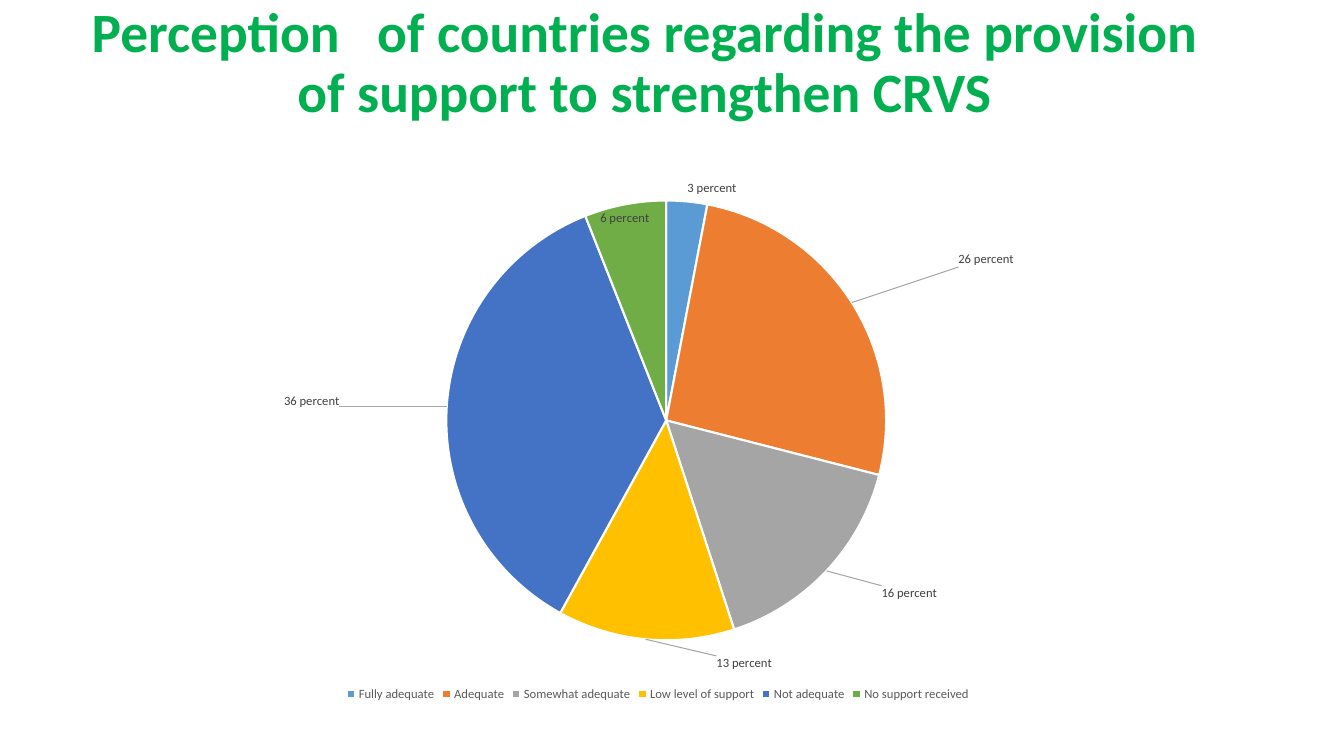
from dataclasses import dataclass

from lxml.etree import SubElement
from pptx import Presentation
from pptx.chart.data import CategoryChartData
from pptx.dml.color import RGBColor
from pptx.enum.chart import XL_CHART_TYPE, XL_LABEL_POSITION, XL_LEGEND_POSITION
from pptx.enum.text import MSO_ANCHOR, MSO_AUTO_SIZE, PP_ALIGN
from pptx.oxml import parse_xml
from pptx.oxml.ns import nsdecls, qn
from pptx.util import Pt


@dataclass(frozen=True)
class Theme:
    font: str = "Calibri"
    title: str = "00B050"
    label: str = "404040"
    legend: str = "595959"
    leader: str = "A6A6A6"
    border: str = "FFFFFF"
    title_size: float = 39.6
    chart_size: float = 9


THEME = Theme()

TITLE = "Perception   of countries regarding the provision of support to strengthen CRVS"

ANSWERS = [
    ("Fully adequate", 0.03, "5B9BD5", (0, 0)),
    ("Adequate", 0.26, "ED7D31", (0.08, -0.06)),
    ("Somewhat adequate", 0.16, "A5A5A5", (0.04, 0.02)),
    ("Low level of support", 0.13, "FFC000", (0.1, 0.02)),
    ("Not adequate", 0.36, "4472C4", (-0.08, -0.01)),
    ("No support received", 0.06, "70AD47", (0.02, 0.05)),
]


def style_font(font, size, color, bold=False):
    font.name = THEME.font
    font.size = Pt(size)
    font.bold = bold
    font.color.rgb = RGBColor.from_string(color)


def place_in_chart(element, index, **settings):
    for old in element.findall(qn("c:layout")):
        element.remove(old)
    layout = parse_xml(f"<c:layout {nsdecls('c')}/>")
    manual = SubElement(layout, qn("c:manualLayout"))
    for name, value in settings.items():
        SubElement(manual, qn(f"c:{name}")).set("val", str(value))
    element.insert(index, layout)


def add_title(page, text):
    box = page.shapes.title
    box.left, box.top, box.width, box.height = Pt(37), Pt(1), Pt(847), Pt(90)
    frame = box.text_frame
    frame.text = text
    frame.word_wrap = True
    frame.auto_size = MSO_AUTO_SIZE.NONE
    frame.vertical_anchor = MSO_ANCHOR.MIDDLE
    frame.margin_left = frame.margin_right = Pt(16)
    frame.margin_top = frame.margin_bottom = 0
    para = frame.paragraphs[0]
    para.alignment = PP_ALIGN.CENTER
    para.line_spacing = 0.9
    style_font(para.runs[0].font, THEME.title_size, THEME.title, bold=True)


def style_slice(point, share, color, shift):
    point.format.fill.solid()
    point.format.fill.fore_color.rgb = RGBColor.from_string(color)
    point.format.line.color.rgb = RGBColor.from_string(THEME.border)
    point.format.line.width = Pt(1.5)
    label = point.data_label
    label.position = XL_LABEL_POSITION.OUTSIDE_END
    para = label.text_frame.paragraphs[0]
    para.text = f"{share * 100:.0f} percent"
    style_font(para.runs[0].font, THEME.chart_size, THEME.label)


def shift_labels(series, shifts):
    labels = series.data_labels._element
    for label, (x, y) in zip(labels.findall(qn("c:dLbl")), shifts):
        if x or y:
            place_in_chart(label, 1, x=x, y=y)


def add_leader_lines(series):
    labels = series.data_labels._element
    show = labels.find(qn("c:showLeaderLines"))
    if show is None:
        show = SubElement(labels, qn("c:showLeaderLines"))
    show.set("val", "1")
    show.addnext(parse_xml(
        f"<c:leaderLines {nsdecls('c', 'a')}><c:spPr><a:ln w='9525'><a:solidFill>"
        f"<a:srgbClr val='{THEME.leader}'/></a:solidFill></a:ln></c:spPr></c:leaderLines>"
    ))


def add_pie(page, answers):
    names, shares, colors, shifts = zip(*answers)
    data = CategoryChartData(number_format="0%")
    data.categories = names
    data.add_series("Series 1", shares)
    chart = page.shapes.add_chart(
        XL_CHART_TYPE.PIE, Pt(17), Pt(119), Pt(906), Pt(385), data
    ).chart
    chart.has_title = False
    style_font(chart.font, THEME.chart_size, THEME.label)
    chart.has_legend = True
    chart.legend.position = XL_LEGEND_POSITION.BOTTOM
    chart.legend.include_in_layout = False
    style_font(chart.legend.font, THEME.chart_size, THEME.legend)

    plot = chart.plots[0]
    plot.vary_by_categories = True
    series = plot.series[0]
    labels = series.data_labels
    labels.show_value = True
    labels.number_format = "0%"
    labels.number_format_is_linked = False
    labels.position = XL_LABEL_POSITION.OUTSIDE_END
    style_font(labels.font, THEME.chart_size, THEME.label)
    for index, (share, color, shift) in enumerate(zip(shares, colors, shifts)):
        style_slice(series.points[index], share, color, shift)
    shift_labels(series, shifts)
    add_leader_lines(series)
    place_in_chart(
        chart._chartSpace.chart.plotArea, 0, layoutTarget="inner",
        xMode="edge", yMode="edge", x=0.333, y=0.063, w=0.347, h=0.816,
    )


def main():
    deck = Presentation()
    deck.slide_width, deck.slide_height = Pt(960), Pt(540)
    page = deck.slides.add_slide(deck.slide_layouts[5])
    add_title(page, TITLE)
    add_pie(page, ANSWERS)
    deck.save("out.pptx")


if __name__ == "__main__":
    main()
